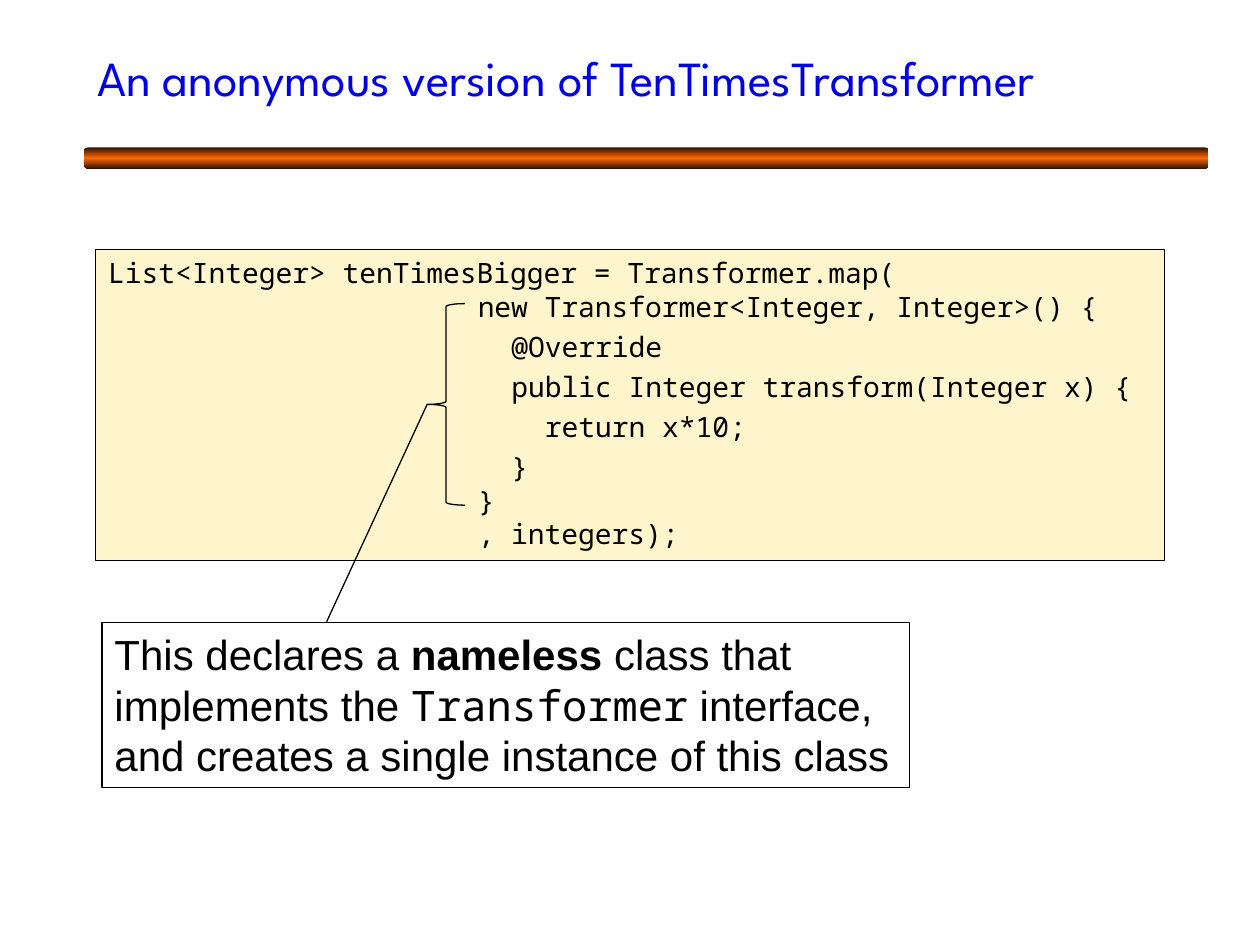
from pptx import Presentation
from pptx.dml.color import RGBColor
from pptx.enum.shapes import MSO_CONNECTOR, MSO_SHAPE
from pptx.enum.text import MSO_ANCHOR, PP_ALIGN
from pptx.oxml.ns import qn
from pptx.util import Inches, Pt
from lxml import etree

RECTANGLE = MSO_SHAPE.RECTANGLE
ROUNDED = MSO_SHAPE.ROUNDED_RECTANGLE
BRACE = MSO_SHAPE.LEFT_BRACE
STRAIGHT = MSO_CONNECTOR.STRAIGHT
LEFT = PP_ALIGN.LEFT
TOP, MIDDLE = MSO_ANCHOR.TOP, MSO_ANCHOR.MIDDLE

COLORS = {"title": "0000E5", "ink": "000000", "paper": "FFFFFF",
          "code": "FFF5CC", "bar_edge": "2A1100", "bar_middle": "FF6600"}
TITLE_FONT, BODY_FONT, CODE_FONT = "League Spartan", "Arial", "Noto Sans Mono"
CODE_SIZE = 16
CHARACTER_WIDTH = Pt(CODE_SIZE * 0.6)

# (indent in characters, space before in points, code)
CODE_LINES = [
    (0, 0, "List<Integer> tenTimesBigger = Transformer.map("),
    (22, 0, "new Transformer<Integer, Integer>() {"),
    (24, 3.7, "@Override"),
    (24, 3.7, "public Integer transform(Integer x) {"),
    (26, 3.7, "return x*10;"),
    (24, 3.7, "}"),
    (22, 0, "}"),
    (22, 0, ", integers);"),
]
CALLOUT_RUNS = [
    ("This declares a ", {}),
    ("nameless", {"bold": True}),
    (" class that implements the ", {}),
    ("Transformer", {"name": CODE_FONT}),
    (" interface, and creates a single instance of this class", {}),
]


def color(name):
    return RGBColor.from_string(COLORS[name])


def add_run(paragraph, text, ink="ink", **formats):
    run = paragraph.add_run()
    run.text = text
    for attribute, value in formats.items():
        setattr(run.font, attribute, value)
    run.font.color.rgb = color(ink)


def outline(shape):
    shape.line.color.rgb = color("ink")
    shape.line.width = Pt(0.75)


def add_panel(slide, box, fill):
    """Add an outlined box with wrapped, top-left text and return it."""
    panel = slide.shapes.add_shape(RECTANGLE, *map(Inches, box))
    panel.shadow.inherit = False
    panel.fill.solid()
    panel.fill.fore_color.rgb = color(fill)
    outline(panel)
    panel.text_frame.word_wrap = True
    panel.text_frame.vertical_anchor = TOP
    panel.text_frame.paragraphs[0].alignment = LEFT
    return panel


def add_title_bar(slide, box):
    bar = slide.shapes.add_shape(ROUNDED, *map(Inches, box))
    bar.shadow.inherit = False
    bar.line.fill.background()
    bar.fill.gradient()
    bar.fill.gradient_angle = 90
    stops = bar._element.spPr.find(qn("a:gradFill")).find(qn("a:gsLst"))
    for stop in list(stops):
        stops.remove(stop)
    for percent, name in ((0, "bar_edge"), (50, "bar_middle"), (100, "bar_edge")):
        stop = etree.SubElement(stops, qn("a:gs"), pos=str(percent * 1000))
        etree.SubElement(stop, qn("a:srgbClr"), val=COLORS[name])


def add_title(slide, box, text):
    title = slide.shapes.title
    title.left, title.top, title.width, title.height = map(Inches, box)
    title.text_frame.vertical_anchor = MIDDLE
    paragraph = title.text_frame.paragraphs[0]
    paragraph.alignment = LEFT
    add_run(paragraph, text, "title", name=TITLE_FONT, size=Pt(28))


def add_code(slide, box):
    frame = add_panel(slide, box, "code").text_frame
    for index, (indent, space, code) in enumerate(CODE_LINES):
        paragraph = frame.add_paragraph() if index else frame.paragraphs[0]
        paragraph.alignment = LEFT
        paragraph.space_before = Pt(space)
        properties = paragraph._p.get_or_add_pPr()
        properties.set("marL", str(indent * CHARACTER_WIDTH))
        properties.set("indent", "0")
        add_run(paragraph, code, name=CODE_FONT, size=Pt(CODE_SIZE))


def add_callout(slide, box):
    paragraph = add_panel(slide, box, "paper").text_frame.paragraphs[0]
    for text, formats in CALLOUT_RUNS:
        add_run(paragraph, text, **{"name": BODY_FONT, "size": Pt(24), **formats})


def add_brace_with_leader(slide, box, end):
    """Bracket the class body and lead from the brace's point to end."""
    brace = slide.shapes.add_shape(BRACE, *map(Inches, box))
    brace.shadow.inherit = False
    brace.fill.background()
    outline(brace)
    end_x, end_y = map(Inches, end)
    leader = slide.shapes.add_connector(STRAIGHT, brace.left, brace.top, end_x, end_y)
    leader.begin_connect(brace, 1)
    outline(leader)
    etree.SubElement(leader._element.spPr, qn("a:effectLst"))


def main():
    presentation = Presentation()
    presentation.slide_width, presentation.slide_height = Inches(10), Inches(7.5)
    slide = presentation.slides.add_slide(presentation.slide_layouts[5])
    add_title_bar(slide, (0.67, 1.17, 8.92, 0.17))
    add_title(slide, (0.67, 0.11, 8.92, 1),
              "An anonymous version of TenTimesTransformer")
    add_callout(slide, (0.81, 4.94, 6.41, 1.31))
    add_code(slide, (0.76, 1.98, 8.48, 2.47))
    add_brace_with_leader(slide, (3.39, 2.41, 0.3, 1.6), (2.59, 4.94))
    presentation.save("out.pptx")


if __name__ == "__main__":
    main()
